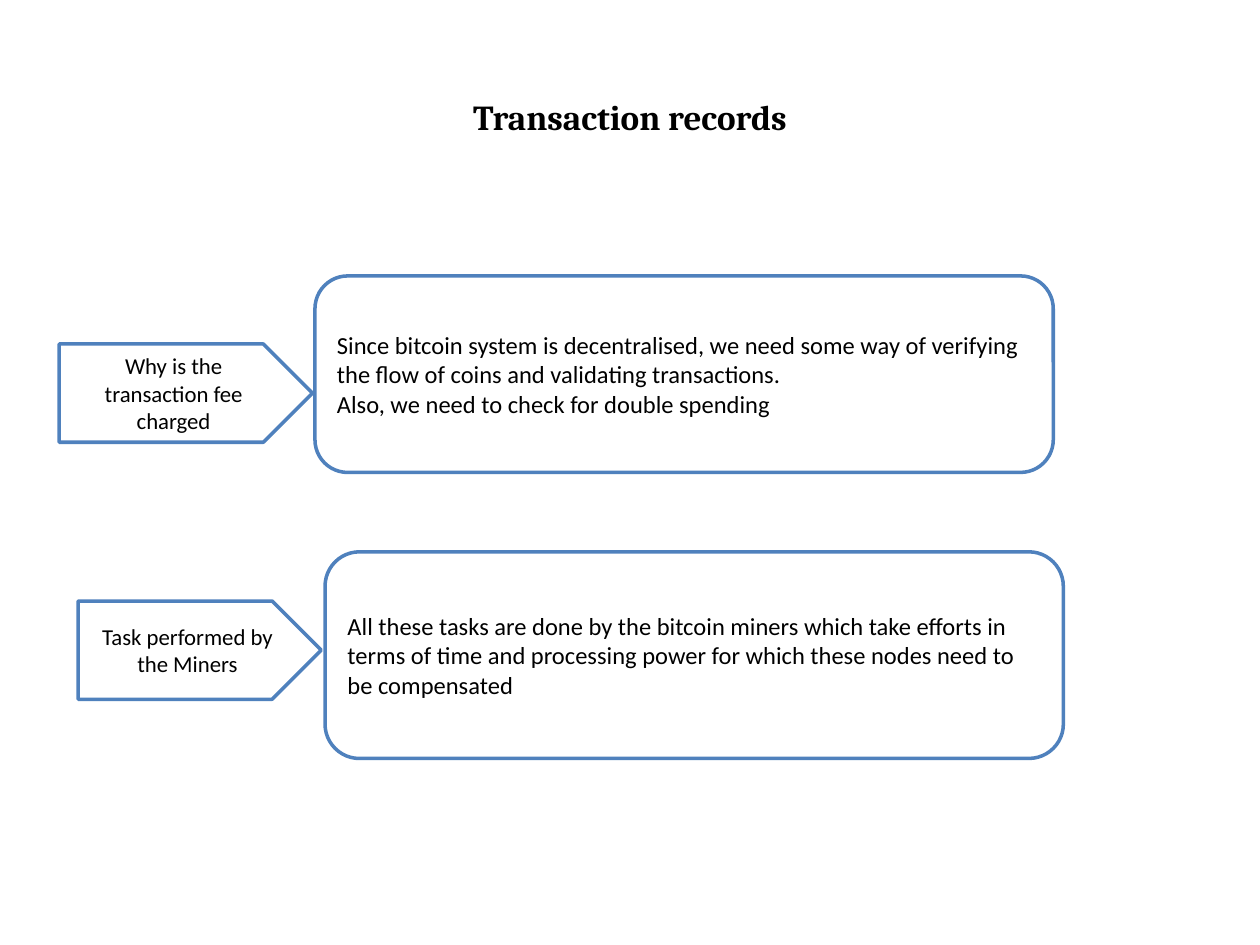
from pptx import Presentation
from pptx import util as u
from pptx.dml.color import RGBColor
from pptx.enum import shapes, text

BLACK = RGBColor(0x00, 0x00, 0x00)
WHITE = RGBColor(0xFF, 0xFF, 0xFF)
BLUE = RGBColor(0x4F, 0x81, 0xBD)


class SlideBuilder:
    """Holds the style and the current slide."""

    title_font = "Cambria"
    body_font = "Calibri"
    line_width = u.Pt(2)

    def __init__(self, slide):
        self.slide = slide

    def set_text(self, shape, lines, font, size, align, bold=False):
        frame = shape.text_frame
        frame.word_wrap = True
        frame.vertical_anchor = text.MSO_ANCHOR.MIDDLE
        frame.text = "\n".join(lines)
        for paragraph in frame.paragraphs:
            paragraph.alignment = align
            paragraph.font.name = font
            paragraph.font.size = u.Pt(size)
            paragraph.font.bold = bold
            paragraph.font.color.rgb = BLACK

    def title(self, line, left, top, width, height):
        box = self.slide.shapes.add_textbox(
            *map(u.Inches, (left, top, width, height)))
        self.set_text(box, [line], self.title_font, 20,
                      text.PP_ALIGN.CENTER, bold=True)

    def outlined(self, kind, left, top, width, height):
        shape = self.slide.shapes.add_shape(
            kind, *map(u.Inches, (left, top, width, height)))
        shape.shadow.inherit = False
        shape.fill.solid()
        shape.fill.fore_color.rgb = WHITE
        shape.line.color.rgb = BLUE
        shape.line.width = self.line_width
        return shape

    def answer(self, lines, *place):
        shape = self.outlined(shapes.MSO_SHAPE.ROUNDED_RECTANGLE, *place)
        self.set_text(shape, lines, self.body_font, 14, text.PP_ALIGN.LEFT)

    def question(self, line, *place):
        shape = self.outlined(shapes.MSO_SHAPE.PENTAGON, *place)
        self.set_text(shape, [line], self.body_font, 13, text.PP_ALIGN.CENTER)


def main():
    presentation = Presentation()
    presentation.slide_width = u.Inches(10)
    presentation.slide_height = u.Inches(7.5)
    builder = SlideBuilder(
        presentation.slides.add_slide(presentation.slide_layouts[6]))

    # Answer boxes
    builder.answer(
        ["Since bitcoin system is decentralised, we need some way of "
         "verifying the flow of coins and validating transactions.",
         "Also, we need to check for double spending"],
        2.5, 2.19, 5.86, 1.56)
    builder.answer(
        ["All these tasks are done by the bitcoin miners which take efforts "
         "in terms of time and processing power for which these nodes need "
         "to be compensated"],
        2.58, 4.38, 5.86, 1.64)

    # Question arrows
    builder.question("Why is the transaction fee charged",
                     0.47, 2.73, 2.01, 0.78)
    builder.question("Task performed by the Miners",
                     0.62, 4.77, 1.93, 0.78)

    # Title
    builder.title("Transaction records", 0.5, 0.3, 9, 1.25)

    presentation.save("out.pptx")


if __name__ == "__main__":
    main()
